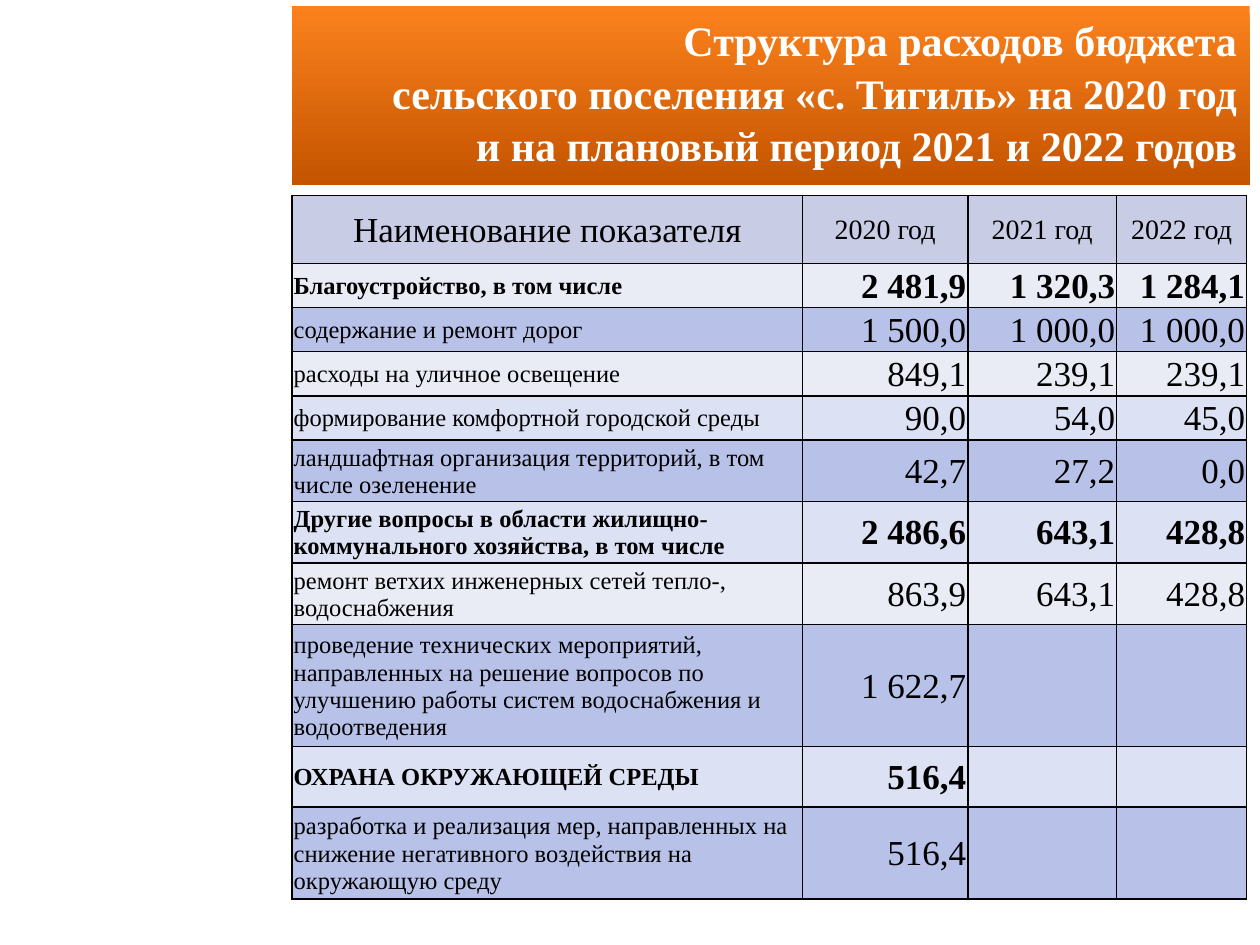
from lxml.etree import SubElement
from pptx import Presentation
from pptx.dml.color import RGBColor
from pptx.enum.text import MSO_ANCHOR, PP_ALIGN
from pptx.oxml.ns import qn
from pptx.util import Cm, Pt

FONT = "Times New Roman"
LIGHT, PALE, BLUE, HEADER = "E9EBF5", "DCE1F4", "B8C2E9", "C8CDE5"

COLUMN_WIDTHS = [10.29, 3.33, 3, 2.62]
YEARS = ["2020 год", "2021 год", "2022 год"]

# Height in cm, fill, bold, indicator, amounts by year
EXPENSES = [
    (0.89, LIGHT, True, "Благоустройство, в том числе", ["2 481,9", "1 320,3", "1 284,1"]),
    (0.89, BLUE, False, "содержание и ремонт дорог", ["1 500,0", "1 000,0", "1 000,0"]),
    (0.89, LIGHT, False, "расходы на уличное освещение", ["849,1", "239,1", "239,1"]),
    (0.89, PALE, False, "формирование комфортной городской среды", ["90,0", "54,0", "45,0"]),
    (1.24, BLUE, False, "ландшафтная организация территорий, в том числе озеленение",
     ["42,7", "27,2", "0,0"]),
    (1.24, PALE, True, "Другие вопросы в области жилищно-коммунального хозяйства, в том числе",
     ["2 486,6", "643,1", "428,8"]),
    (1.24, LIGHT, False, "ремонт ветхих инженерных сетей тепло-, водоснабжения",
     ["863,9", "643,1", "428,8"]),
    (2.46, BLUE, False, "проведение технических мероприятий, направленных на решение вопросов "
     "по улучшению работы систем водоснабжения и водоотведения", ["1 622,7", "", ""]),
    (1.22, PALE, True, "ОХРАНА ОКРУЖАЮЩЕЙ СРЕДЫ", ["516,4", "", ""]),
    (1.85, BLUE, False, "разработка и реализация мер, направленных на снижение негативного "
     "воздействия на окружающую среду", ["516,4", "", ""]),
]


def color(hex_value):
    return RGBColor.from_string(hex_value)


def format_paragraph(paragraph, size, bold, hex_value, align):
    paragraph.alignment = align
    font = paragraph.font
    font.name, font.size, font.bold = FONT, Pt(size), bold
    font.color.rgb = color(hex_value)


def add_borders(cell):
    properties = cell._tc.get_or_add_tcPr()
    for position, side in enumerate(("a:lnL", "a:lnR", "a:lnT", "a:lnB")):
        line = SubElement(properties, qn(side), w=str(Pt(1)))
        fill = SubElement(line, qn("a:solidFill"))
        SubElement(fill, qn("a:srgbClr"), val="000000")
        properties.insert(position, line)


def fill_cell(cell, text, fill, size, bold, align):
    cell.fill.solid()
    cell.fill.fore_color.rgb = color(fill)
    add_borders(cell)
    cell.vertical_anchor = MSO_ANCHOR.MIDDLE
    cell.margin_left = cell.margin_right = cell.margin_top = Cm(0.03)
    cell.margin_bottom = 0
    cell.text = text
    format_paragraph(cell.text_frame.paragraphs[0], size, bold, "000000", align)


def place_title(slide, left, top, width, height):
    title = slide.shapes.title
    title.left, title.top, title.width, title.height = map(Cm, (left, top, width, height))

    # Orange band, darker towards the bottom
    title.fill.gradient()
    title.fill.gradient_angle = 270
    for stop, position, hex_value in zip(title.fill.gradient_stops, (0, 1), ("FB811D", "C45400")):
        stop.position = position
        stop.color.rgb = color(hex_value)

    frame = title.text_frame
    frame.word_wrap = True
    frame.vertical_anchor = MSO_ANCHOR.TOP
    frame.text = ("Структура расходов бюджета\v"
                  "сельского поселения «с. Тигиль» на 2020 год\v"
                  "и на плановый период 2021 и 2022 годов")
    heading = frame.paragraphs[0]
    heading.line_spacing = 1.04
    format_paragraph(heading, 24, True, "FFFFFF", PP_ALIGN.RIGHT)


def place_budget(slide, left, top, width, height):
    budget = slide.shapes.add_table(len(EXPENSES) + 1, len(COLUMN_WIDTHS),
                                    Cm(left), Cm(top), Cm(width), Cm(height)).table
    for column, column_width in zip(budget.columns, COLUMN_WIDTHS):
        column.width = Cm(column_width)

    # Header row
    budget.rows[0].height = Cm(1.37)
    for index, heading in enumerate(["Наименование показателя"] + YEARS):
        fill_cell(budget.cell(0, index), heading, HEADER, 16 if index else 20,
                  False, PP_ALIGN.CENTER)

    # Expense rows
    for row, (row_height, fill, bold, indicator, amounts) in enumerate(EXPENSES, 1):
        budget.rows[row].height = Cm(row_height)
        fill_cell(budget.cell(row, 0), indicator, fill, 14, bold, PP_ALIGN.LEFT)
        for column, amount in enumerate(amounts, 1):
            fill_cell(budget.cell(row, column), amount, fill, 20, bold, PP_ALIGN.RIGHT)


def main():
    presentation = Presentation()
    presentation.slide_width, presentation.slide_height = Cm(25.4), Cm(19.05)
    slide = presentation.slides.add_slide(presentation.slide_layouts[5])
    place_title(slide, 5.89, 0.13, 19.3, 3.61)
    place_budget(slide, 5.89, 3.94, 19.24, 14.18)
    presentation.save("out.pptx")


if __name__ == "__main__":
    main()
